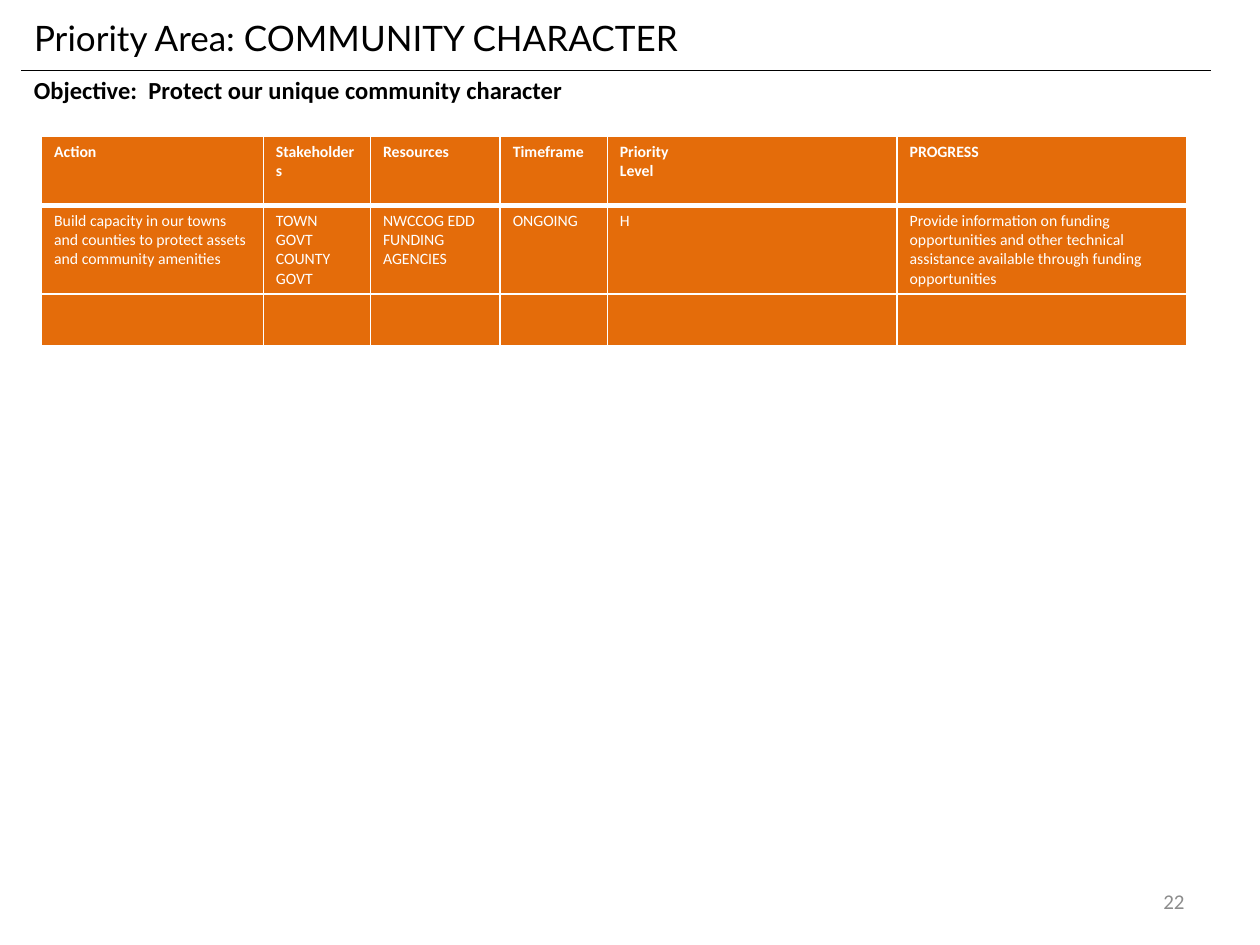
from lxml import etree
from pptx import Presentation
from pptx import util as u
from pptx.dml.color import RGBColor
from pptx.enum import shapes, text
from pptx.oxml import ns

ORANGE, WHITE, BLACK, GRAY = "E46C0A", "FFFFFF", "000000", "8C8C8C"
COLUMNS = [1.76, 0.85, 1.03, 0.85, 2.3, 2.3]
ROWS = [0.55, 0.7, 0.41]
CELLS = [
    ["Action", "Stakeholders", "Resources", "Timeframe", "Priority\nLevel", "PROGRESS"],
    [
        "Build capacity in our towns and counties to protect assets and community amenities",
        "TOWN GOVT\nCOUNTY GOVT",
        "NWCCOG EDD\nFUNDING AGENCIES",
        "ONGOING",
        "H",
        "Provide information on funding opportunities and other technical "
        "assistance available through funding opportunities",
    ],
    [""] * len(COLUMNS),
]


def rgb(value):
    """Turn a hex string into a colour."""
    return RGBColor.from_string(value)


def write(tf, content, size=9, font="Calibri", color=BLACK, bold=False,
          align=text.PP_ALIGN.LEFT, anchor=text.MSO_ANCHOR.TOP):
    """Fill a text frame, one paragraph per line, in one format."""
    tf.word_wrap = True
    tf.vertical_anchor = anchor
    for i, line in enumerate(content.split("\n")):
        p = tf.add_paragraph() if i else tf.paragraphs[0]
        p.alignment = align
        p.font.size = u.Pt(size)
        if line:
            r = p.add_run()
            r.text = line
            r.font.size, r.font.name, r.font.bold = u.Pt(size), font, bold
            r.font.color.rgb = rgb(color)


def border(cell, side, width, color=WHITE):
    """Draw one side of a table cell."""
    ln = etree.SubElement(cell._tc.get_or_add_tcPr(), ns.qn(f"a:ln{side}"), w=str(u.Pt(width)))
    fill = etree.SubElement(ln, ns.qn("a:solidFill"))
    etree.SubElement(fill, ns.qn("a:srgbClr"), val=color)


class Deck:
    """Hold the style and the current slide."""

    def __init__(self, prs):
        """Add a title-only slide to the presentation."""
        self.s = prs.slides.add_slide(prs.slide_layouts[5])

    def title(self, content, box, **fmt):
        """Place and format the title placeholder."""
        sp = self.s.shapes.title
        sp.left, sp.top, sp.width, sp.height = map(u.Inches, box)
        sp.text_frame.auto_size = text.MSO_AUTO_SIZE.NONE
        write(sp.text_frame, content, **fmt)

    def label(self, content, box, **fmt):
        """Add a text box."""
        sp = self.s.shapes.add_textbox(*map(u.Inches, box))
        write(sp.text_frame, content, **fmt)

    def rule(self, x1, x2, y):
        """Add a thin horizontal line."""
        sp = self.s.shapes.add_connector(
            shapes.MSO_CONNECTOR.STRAIGHT, *map(u.Inches, (x1, y, x2, y)))
        sp.line.color.rgb = rgb(BLACK)
        sp.line.width = u.Pt(0.75)
        etree.SubElement(sp._element.spPr, ns.qn("a:effectLst"))

    def table(self, cells, left, top, columns, rows):
        """Add a filled table with white borders and a bold header."""
        box = map(u.Inches, (left, top, sum(columns), sum(rows)))
        tbl = self.s.shapes.add_table(len(rows), len(columns), *box).table
        for column, width in zip(tbl.columns, columns):
            column.width = u.Inches(width)
        for i, (row, height) in enumerate(zip(tbl.rows, rows)):
            row.height = u.Inches(height)
            for cell, content in zip(row.cells, cells[i]):
                widths = {"L": 1, "R": 1, "T": 3 if i == 1 else 1, "B": 1 if i else 3}
                for side, width in widths.items():
                    border(cell, side, width)
                cell.fill.solid()
                cell.fill.fore_color.rgb = rgb(ORANGE)
                write(cell.text_frame, content, color=WHITE, bold=i == 0)


def main():
    """Build and save the slide."""
    prs = Presentation()
    prs.slide_width, prs.slide_height = u.Inches(10), u.Inches(7.5)
    deck = Deck(prs)
    deck.title("Priority Area: COMMUNITY CHARACTER", (0.17, 0.08, 8.67, 0.45),
               size=20, font="Lato")
    deck.label("Objective:  Protect our unique community character",
               (0.17, 0.55, 8.67, 0.34), size=14, bold=True)
    deck.table(CELLS, 0.33, 1.08, COLUMNS, ROWS)
    deck.rule(0.17, 9.61, 0.56)
    deck.label("22", (7.17, 6.95, 2.33, 0.4), size=12, color=GRAY,
               align=text.PP_ALIGN.RIGHT, anchor=text.MSO_ANCHOR.MIDDLE)
    prs.save("out.pptx")


if __name__ == "__main__":
    main()
